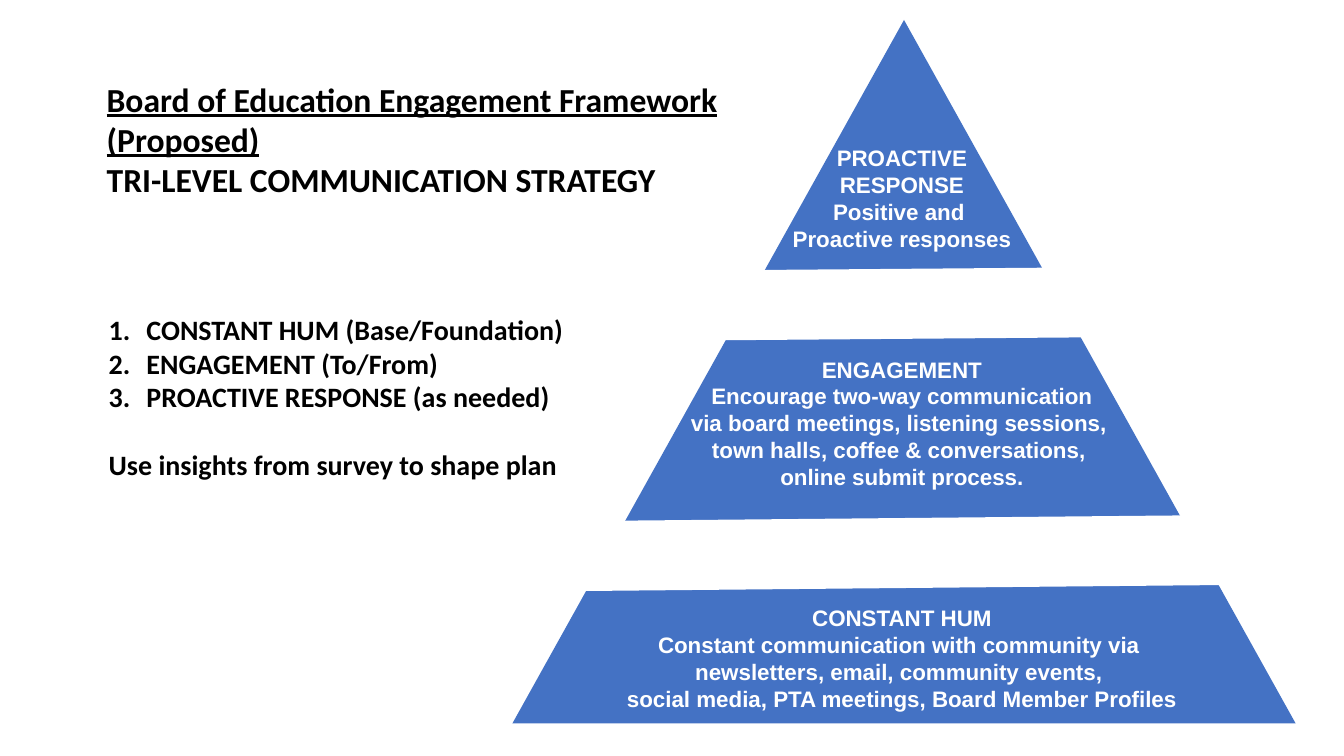
from dataclasses import dataclass

from lxml import etree
from pptx import Presentation
from pptx import util as u
from pptx.dml.color import RGBColor
from pptx.enum import shapes, text
from pptx.oxml.ns import qn

PX = 9525  # EMU per px, 96 px to the inch


@dataclass(frozen=True)
class Theme:
    ink: RGBColor = RGBColor(0, 0, 0)
    paper: RGBColor = RGBColor(255, 255, 255)
    pyramid: RGBColor = RGBColor(0x44, 0x72, 0xC4)
    body_font: str = "Calibri"
    level_font: str = "Arial"
    title_size: int = 24
    list_size: int = 20
    level_size: int = 16
    gap_width: int = 50


THEME = Theme()

TITLE = ["Board of Education Engagement Framework (Proposed)",
         "TRI-LEVEL COMMUNICATION STRATEGY"]
STEPS = ["CONSTANT HUM (Base/Foundation)",
         "ENGAGEMENT (To/From)",
         "PROACTIVE RESPONSE (as needed)"]
CLOSING = "Use insights from survey to shape plan"

# Each level: top and height within the pyramid box, then its lines
LEVELS = [
    (552, 113, [" CONSTANT HUM ",
                "Constant communication with community via ",
                "newsletters, email, community events, ",
                "social media, PTA meetings, Board Member Profiles"]),
    (315, 168, ["ENGAGEMENT",
                "Encourage two-way communication",
                "via board meetings, listening sessions, ",
                "town halls, coffee & conversations, ",
                "online submit process."]),
    (114, 142, ["PROACTIVE", "RESPONSE", "Positive and ",
                "Proactive responses"]),
]


def px(*lengths):
    return [u.Emu(n * PX) for n in lengths]


def write(tf, lines, font, size, color, align=text.PP_ALIGN.LEFT):
    """Fill a text frame with one bold paragraph per line."""
    tf.word_wrap = True
    tf.auto_size = text.MSO_AUTO_SIZE.NONE
    tf.vertical_anchor = text.MSO_ANCHOR.TOP
    for i, line in enumerate(lines):
        p = tf.paragraphs[0] if i == 0 else tf.add_paragraph()
        p.text = line
        p.alignment = align
        p.font.name, p.font.size, p.font.bold = font, u.Pt(size), True
        p.font.color.rgb = color
    return tf.paragraphs


def number(p, indent):
    """Give a paragraph an automatic number with a hanging indent."""
    pPr = p._p.get_or_add_pPr()
    pPr.set("marL", str(indent * PX))
    pPr.set("indent", str(-indent * PX))
    bullet = etree.Element(qn("a:buAutoNum"), type="arabicPeriod")
    pPr.insert_element_before(bullet, "a:tabLst", "a:defRPr", "a:extLst")


def add_title(slide, x, y, w, h):
    title = slide.shapes.title
    title.left, title.top, title.width, title.height = px(x, y, w, h)
    heading, _ = write(title.text_frame, TITLE, THEME.body_font,
                       THEME.title_size, THEME.ink)
    heading.font.underline = True


def add_steps(slide, x, y, w, h):
    box = slide.shapes.add_textbox(*px(x, y, w, h))
    *steps, closing = write(box.text_frame, STEPS + [CLOSING],
                            THEME.body_font, THEME.list_size, THEME.ink)
    for p in steps:
        number(p, 36)
    closing.space_before = u.Pt(24)


def add_gap(slide, x, y, w, rise):
    """Draw a slightly tilted band that cuts the pyramid."""
    line = slide.shapes.add_connector(shapes.MSO_CONNECTOR.STRAIGHT,
                                      *px(x, y, x + w, y - rise))
    line.line.color.rgb = THEME.paper
    line.line.width = u.Pt(THEME.gap_width)
    etree.SubElement(line._element.spPr, qn("a:effectLst"))


def add_pyramid(slide, x, y, w, h):
    sp = slide.shapes.add_shape(shapes.MSO_SHAPE.ISOSCELES_TRIANGLE,
                                *px(x, y, w, h))
    sp.shadow.inherit = False
    sp.fill.solid()
    sp.fill.fore_color.rgb = THEME.pyramid
    sp.line.fill.background()

    # Gaps between the levels
    for dx, dy, rise in [(22, 511, 7), (45, 273, 6)]:
        add_gap(slide, x + dx, y + dy, w + 1, rise)

    # Level captions
    for dy, height, lines in LEVELS:
        box = slide.shapes.add_textbox(*px(x + 45, y + dy, 652, height))
        write(box.text_frame, lines, THEME.level_font, THEME.level_size,
              THEME.paper, text.PP_ALIGN.CENTER)


def main():
    prs = Presentation()
    prs.slide_width, prs.slide_height = px(1280, 720)
    slide = prs.slides.add_slide(prs.slide_layouts.get_by_name("Title Only"))
    add_pyramid(slide, 488, 19, 746, 670)
    add_title(slide, 92, 70, 603, 126)
    add_steps(slide, 94, 293, 468, 249)
    prs.save("out.pptx")


if __name__ == "__main__":
    main()
